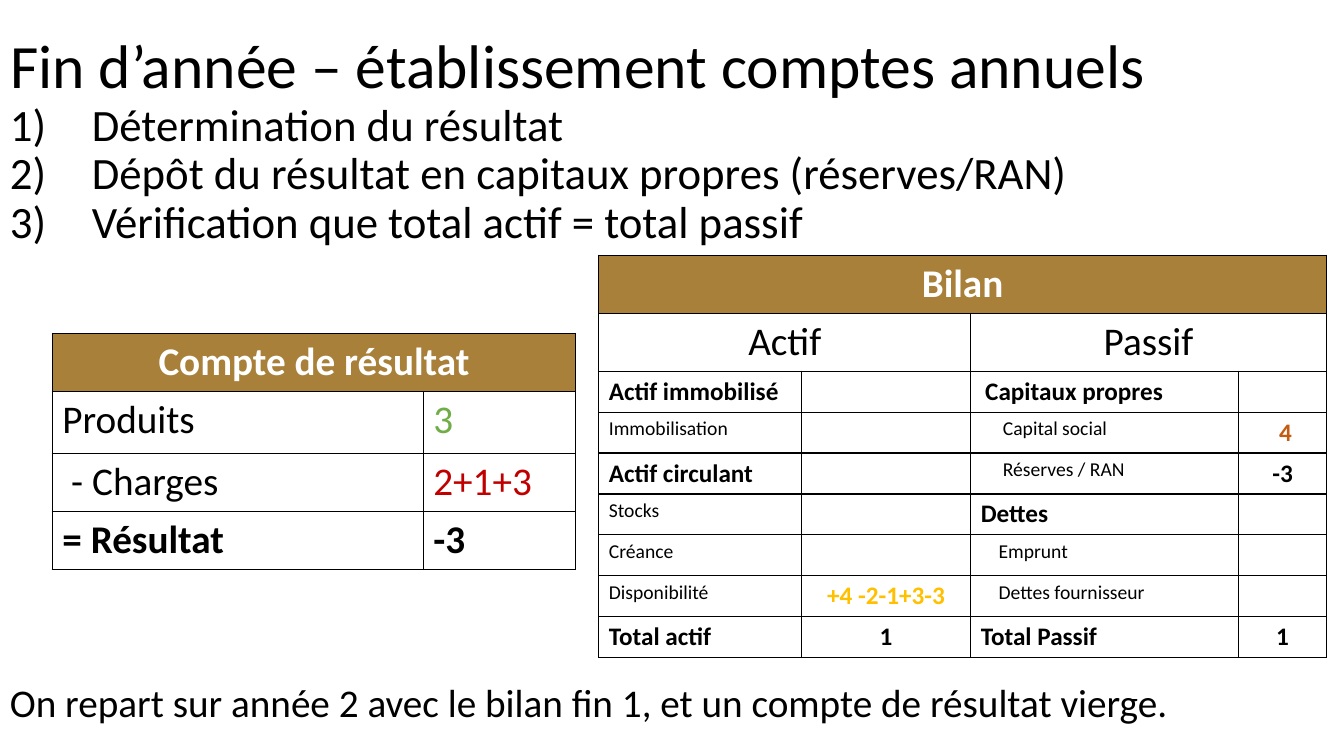
"""Build the year-end slide with the income statement and the balance sheet."""
from lxml.etree import SubElement
from pptx import Presentation
from pptx.dml.color import RGBColor
from pptx.enum.text import MSO_ANCHOR, MSO_AUTO_SIZE, PP_ALIGN
from pptx.oxml import parse_xml
from pptx.oxml.ns import nsdecls, qn
from pptx.util import Pt

BLACK = RGBColor(0x00, 0x00, 0x00)
WHITE = RGBColor(0xFF, 0xFF, 0xFF)
BRONZE = RGBColor(0xA8, 0x80, 0x3A)
GREEN = RGBColor(0x70, 0xAD, 0x47)
RED = RGBColor(0xC0, 0x00, 0x00)
ORANGE = RGBColor(0xC5, 0x5A, 0x11)
GOLD = RGBColor(0xFF, 0xC0, 0x00)
LEFT, CENTER = PP_ALIGN.LEFT, PP_ALIGN.CENTER
CELL_MARGIN = 7.2


def write(paragraph, text, size, bold=False, color=BLACK, align=LEFT):
    paragraph.text = text
    paragraph.alignment = align
    paragraph.font.name = "Calibri"
    paragraph.font.size = Pt(size)
    paragraph.font.bold = bold
    paragraph.font.color.rgb = color


def add_grid(left, top, widths, heights):
    frame = slide.shapes.add_table(len(heights), len(widths), Pt(left), Pt(top),
                                   Pt(sum(widths)), Pt(sum(heights)))
    table = frame.table
    table.first_row = table.horz_banding = False
    for column, width in zip(table.columns, widths):
        column.width = Pt(width)
    for row, height in zip(table.rows, heights):
        row.height = Pt(height)
    for cell in table.iter_cells():
        properties = cell._tc.get_or_add_tcPr()
        for side in ("lnL", "lnR", "lnT", "lnB"):
            properties.append(parse_xml(
                f'<a:{side} {nsdecls("a")} w="12700"><a:solidFill>'
                f'<a:srgbClr val="{BLACK}"/></a:solidFill></a:{side}>'))
        cell.fill.background()
    header = table.cell(0, 0)
    header.merge(table.cell(0, len(widths) - 1))
    header.fill.solid()
    header.fill.fore_color.rgb = BRONZE
    return table


presentation = Presentation()
presentation.slide_width, presentation.slide_height = Pt(960), Pt(540)
slide = presentation.slides.add_slide(presentation.slide_layouts[5])

title = slide.shapes.title
steps = slide.shapes.add_textbox(Pt(0), Pt(69.9), Pt(932), Pt(113))
closing = slide.shapes.add_textbox(Pt(0), Pt(484.6), Pt(932), Pt(40))
title.left, title.top, title.width, title.height = Pt(0), Pt(21.6), Pt(932), Pt(55)
for shape, size, lines in (
    (title, 44, ["Fin d’année – établissement comptes annuels"]),
    (steps, 32, ["Détermination du résultat",
                 "Dépôt du résultat en capitaux propres (réserves/RAN)",
                 "Vérification que total actif = total passif"]),
    (closing, 28, ["On repart sur année 2 avec le bilan fin 1, "
                   "et un compte de résultat vierge."]),
):
    text_frame = shape.text_frame
    text_frame.word_wrap = True
    text_frame.auto_size = MSO_AUTO_SIZE.NONE
    text_frame.vertical_anchor = MSO_ANCHOR.TOP
    for index, line in enumerate(lines):
        paragraph = text_frame.add_paragraph() if index else text_frame.paragraphs[0]
        write(paragraph, line, size)
        paragraph.line_spacing = 0.9

for paragraph in steps.text_frame.paragraphs:
    properties = paragraph._p.get_or_add_pPr()
    properties.set("marL", str(Pt(58.5)))
    properties.set("indent", str(-Pt(58.5)))
    SubElement(properties, qn("a:buAutoNum"), type="arabicParenR")

income = add_grid(37.4, 238.2, [265, 108.7], [41.5, 44, 41.5, 41.5])
write(income.cell(0, 0).text_frame.paragraphs[0], "Compte de résultat", 28, True, WHITE, CENTER)
for row, (label, value, bold, color) in enumerate([
    ("Produits", "3", False, GREEN),
    (" - Charges", "2+1+3", False, RED),
    ("= Résultat", "-3", True, BLACK),
], start=1):
    write(income.cell(row, 0).text_frame.paragraphs[0], label, 28, bold)
    write(income.cell(row, 1).text_frame.paragraphs[0], value, 28, bold, color)

balance = add_grid(427.7, 182.2, [144.7, 121, 191.5, 62.6], [41.5] * 2 + [29.2] * 7)
write(balance.cell(0, 0).text_frame.paragraphs[0], "Bilan", 28, True, WHITE, CENTER)
for column, heading in ((0, "Actif"), (2, "Passif")):
    cell = balance.cell(1, column)
    cell.merge(balance.cell(1, column + 1))
    write(cell.text_frame.paragraphs[0], heading, 28, align=CENTER)

assets = [("Actif immobilisé", True, 0, "", BLACK),
          ("Immobilisation", False, 0, "", BLACK),
          ("Actif circulant", True, 0, "", BLACK),
          ("Stocks", False, 0, "", BLACK),
          ("Créance", False, 0, "", BLACK),
          ("Disponibilité", False, 0, "+4 -2-1+3-3", GOLD),
          ("Total actif", True, 0, "1", BLACK)]
liabilities = [("Capitaux propres", True, 3.2, "", BLACK),
               ("Capital social", False, 15.8, " 4", ORANGE),
               ("Réserves / RAN", False, 15.8, "-3", BLACK),
               ("Dettes", True, 0, "", BLACK),
               ("Emprunt", False, 12.7, "", BLACK),
               ("Dettes fournisseur", False, 12.7, "", BLACK),
               ("Total Passif", True, 0, "1", BLACK)]
for column, entries in ((0, assets), (2, liabilities)):
    for row, (label, bold, indent, value, color) in enumerate(entries, start=2):
        cell = balance.cell(row, column)
        cell.margin_left = Pt(CELL_MARGIN + indent)
        write(cell.text_frame.paragraphs[0], label, 18 if bold else 14, bold)
        if value:
            write(balance.cell(row, column + 1).text_frame.paragraphs[0],
                  value, 18, True, color, CENTER)

presentation.save("out.pptx")
